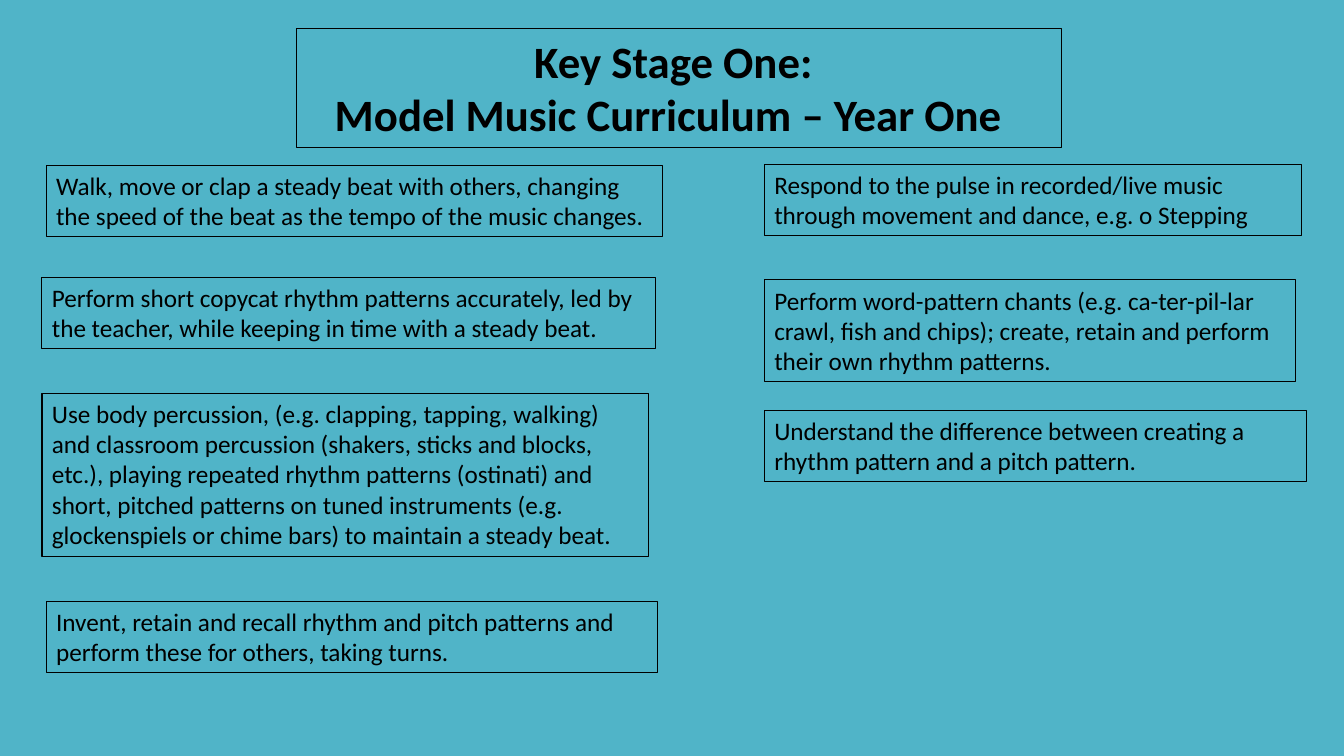
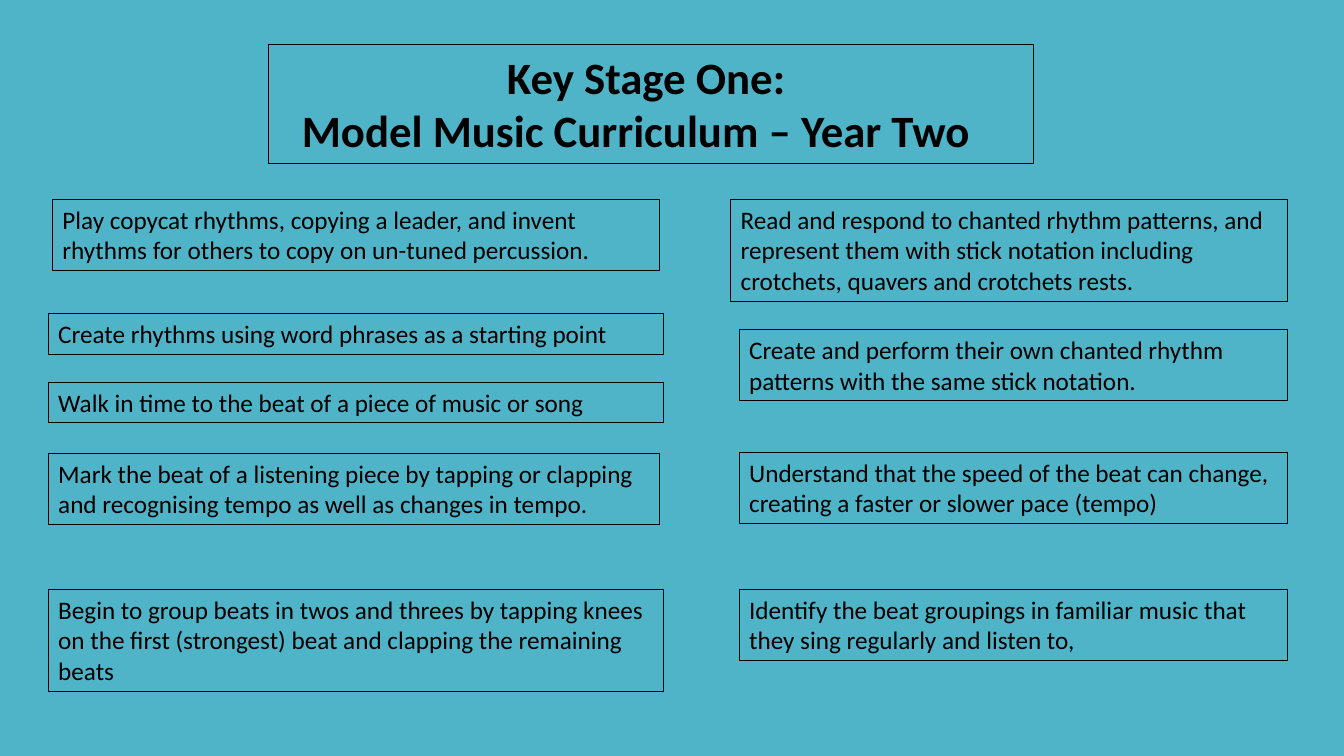
from pptx import Presentation
from pptx.dml.color import RGBColor
from pptx.enum.text import MSO_AUTO_SIZE, PP_ALIGN
from pptx.util import Pt

CENTER, LEFT = PP_ALIGN.CENTER, PP_ALIGN.LEFT
GROW = MSO_AUTO_SIZE.SHAPE_TO_FIT_TEXT


def rgb(value):
    return RGBColor.from_string(value)


class Deck:
    BACKGROUND, INK, FONT = "50B4C8", "000000", "Calibri"
    INSET = 7.2
    BODY_LINE = 21.85
    TITLE_WIDTH, TITLE_HEIGHT = 546.5, 85
    TITLE_FONT = {"name": FONT, "size": Pt(32), "bold": True}
    BODY_FONT = {"name": FONT, "size": Pt(18), "bold": False}

    def __init__(self):
        self.prs = Presentation()
        self.prs.slide_width, self.prs.slide_height = Pt(960), Pt(540)

    def new_slide(self):
        self.s = self.prs.slides.add_slide(self.prs.slide_layouts[6])
        fill = self.s.background.fill
        fill.solid()
        fill.fore_color.rgb = rgb(self.BACKGROUND)

    def outlined_text(self, left, top, width, height, lines, font, align=LEFT):
        sp = self.s.shapes.add_textbox(Pt(left), Pt(top), Pt(width), Pt(height))
        sp.line.color.rgb = rgb(self.INK)
        sp.line.width = Pt(0.75)
        tf = sp.text_frame
        tf.word_wrap = True
        tf.auto_size = GROW
        for i, text in enumerate(lines):
            p = tf.add_paragraph() if i else tf.paragraphs[0]
            p.alignment = align
            r = p.add_run()
            r.text = text
            for name, value in font.items():
                setattr(r.font, name, value)
            r.font.color.rgb = rgb(self.INK)
        return tf

    def title(self, left, top, lines, shift):
        """Centre the lines, the last one moved left by shift, the first by half an inset."""
        tf = self.outlined_text(left, top, self.TITLE_WIDTH, self.TITLE_HEIGHT,
                                lines, self.TITLE_FONT, CENTER)
        tf.margin_right = Pt(self.INSET + 2 * shift)
        indent = Pt(2 * shift - self.INSET)
        tf.paragraphs[0]._p.get_or_add_pPr().set("marL", str(int(indent)))

    def statement(self, left, top, width, line_count, text):
        height = line_count * self.BODY_LINE + self.INSET
        self.outlined_text(left, top, width, height, [text], self.BODY_FONT)


# Each slide: title left, top, shift and last line, then its statements
# as left, top, width, number of lines and text.
SLIDES = [
    ((211.5, 20.2, 7.2, "Model Music Curriculum – Year One"), [
        (33, 118, 440, 2, "Walk, move or clap a steady beat with others, changing the speed "
                          "of the beat as the tempo of the music changes."),
        (30, 198, 438, 2, "Perform short copycat rhythm patterns accurately, led by the "
                          "teacher, while keeping in time with a steady beat."),
        (30, 281, 433, 5, "Use body percussion, (e.g. clapping, tapping, walking) and "
                          "classroom percussion (shakers, sticks and blocks, etc.), playing "
                          "repeated rhythm patterns (ostinati) and short, pitched patterns on "
                          "tuned instruments (e.g. glockenspiels or chime bars) to maintain a "
                          "steady beat."),
        (33, 429.5, 437, 2, "Invent, retain and recall rhythm and pitch patterns and perform "
                            "these for others, taking turns."),
        (546, 117.5, 383.5, 2, "Respond to the pulse in recorded/live music through movement "
                               "and dance, e.g. o Stepping"),
        (546, 200, 379.5, 3, "Perform word-pattern chants (e.g. ca-ter-pil-lar crawl, fish and "
                             "chips); create, retain and perform their own rhythm patterns."),
        (546, 293, 387, 2, "Understand the difference between creating a rhythm pattern and "
                           "a pitch pattern."),
    ]),
    ((192, 31.7, 10.8, "Model Music Curriculum – Year Two"), [
        (37.5, 142.5, 433.5, 2, "Play copycat rhythms, copying a leader, and invent rhythms "
                                "for others to copy on un-tuned percussion."),
        (34.5, 224, 439.5, 1, "Create rhythms using word phrases as a starting point"),
        (34.5, 273, 439.5, 1, "Walk in time to the beat of a piece of music or song"),
        (34.5, 324, 436.5, 2, "Mark the beat of a listening piece by tapping or clapping and "
                              "recognising tempo as well as changes in tempo."),
        (34.5, 421, 439.5, 3, "Begin to group beats in twos and threes by tapping knees on the "
                              "first (strongest) beat and clapping the remaining beats"),
        (522, 142.5, 397.5, 3, "Read and respond to chanted rhythm patterns, and represent "
                               "them with stick notation including crotchets, quavers and "
                               "crotchets rests."),
        (528, 235.5, 391.5, 2, "Create and perform their own chanted rhythm patterns with the "
                               "same stick notation."),
        (528, 323, 391.5, 2, "Understand that the speed of the beat can change, creating a "
                             "faster or slower pace (tempo)"),
        (528, 421, 391.5, 2, "Identify the beat groupings in familiar music that they sing "
                             "regularly and listen to,"),
    ]),
]


def main():
    deck = Deck()
    for (left, top, shift, subject), statements in SLIDES:
        deck.new_slide()
        deck.title(left, top, ["Key Stage One:", subject], shift)
        for statement in statements:
            deck.statement(*statement)
    deck.prs.save("out.pptx")


if __name__ == "__main__":
    main()
